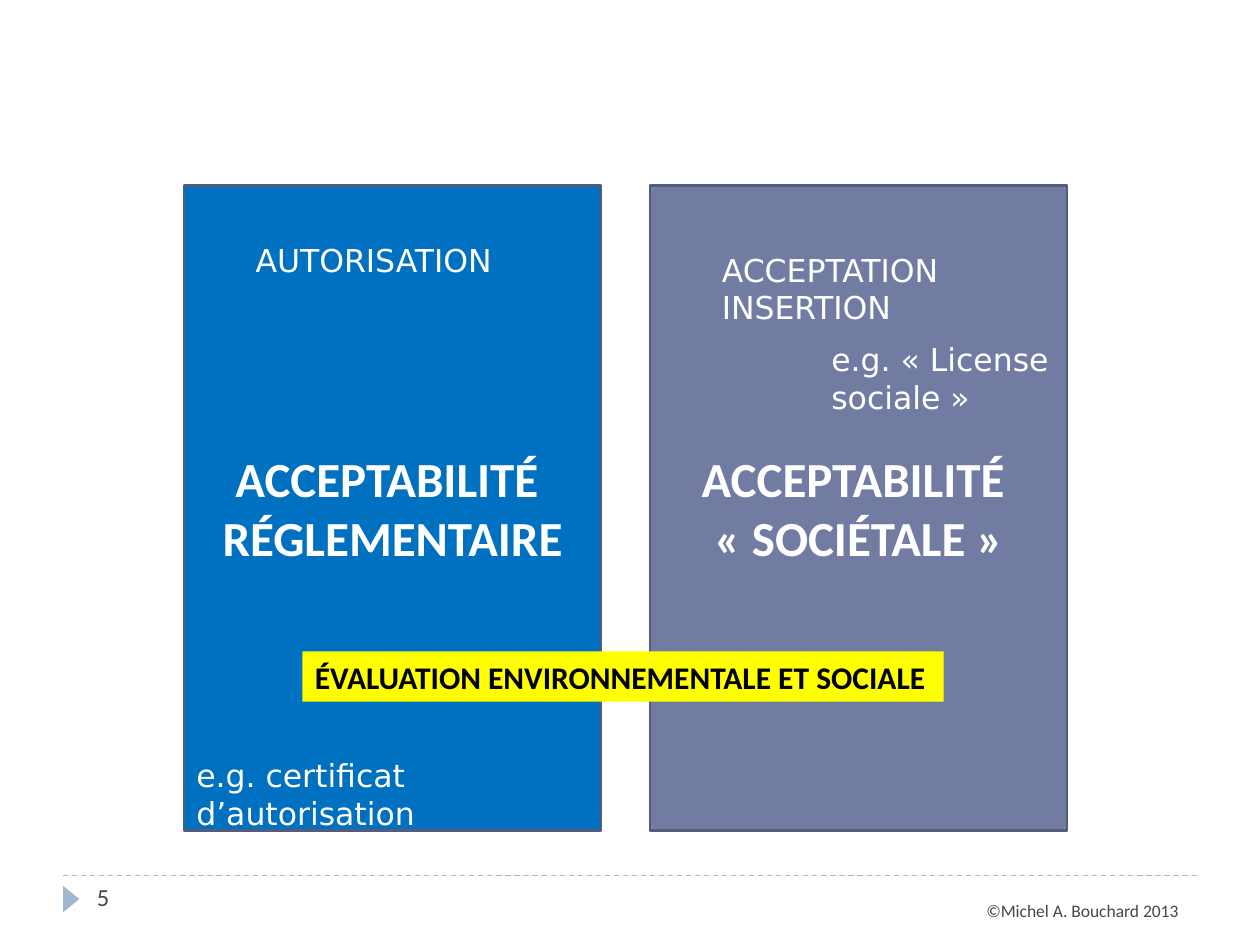
from pptx import Presentation
from pptx.dml.color import RGBColor
from pptx.enum.dml import MSO_LINE
from pptx.enum.shapes import MSO_CONNECTOR, MSO_SHAPE
from pptx.enum.text import MSO_ANCHOR, MSO_AUTO_SIZE, PP_ALIGN
from pptx.oxml.ns import qn
from pptx.util import Inches, Pt
from lxml import etree

RECT, TRI = MSO_SHAPE.RECTANGLE, MSO_SHAPE.ISOSCELES_TRIANGLE
LEFT, MID, RIGHT = PP_ALIGN.LEFT, PP_ALIGN.CENTER, PP_ALIGN.RIGHT
TOP, CORE = MSO_ANCHOR.TOP, MSO_ANCHOR.MIDDLE
GROW, DASH = MSO_AUTO_SIZE.SHAPE_TO_FIT_TEXT, MSO_LINE.DASH

THEME = {
    "blue": "0070C0", "slate": "727CA3", "edge": "545C79", "pale": "9FB8CD",
    "gold": "FFFF00", "white": "FFFFFF", "black": "000000", "ink": "464653",
    "head": 28, "body": 18, "page": 14, "foot": 10,
    "main": "Calibri", "note": "DejaVu Sans",
}
BOLD = {"name": THEME["main"], "bold": True}
HEAD = {**BOLD, "size": Pt(THEME["head"])}
BAND = {**BOLD, "size": Pt(THEME["body"])}
NOTE = {"name": THEME["note"], "size": Pt(THEME["body"])}
PAGE = {"name": THEME["main"], "size": Pt(THEME["page"])}
FOOT = {"name": THEME["main"], "size": Pt(THEME["foot"])}

deck = Presentation()
deck.slide_width, deck.slide_height = Inches(10), Inches(7.5)
WIDE, HIGH = deck.slide_width / 100, deck.slide_height / 100
slide = deck.slides.add_slide(deck.slide_layouts[6])
shapes = slide.shapes


def place(x, y, w, h):
    return int(x * WIDE), int(y * HIGH), int(w * WIDE), int(h * HIGH)


def write(shape, lines, face, tint, align=LEFT, anchor=TOP, fit=False):
    frame = shape.text_frame
    frame.word_wrap = not fit
    frame.vertical_anchor = anchor
    if fit:
        frame.auto_size = GROW
    for i, line in enumerate(lines):
        para = frame.add_paragraph() if i else frame.paragraphs[0]
        para.alignment = align
        run = para.add_run()
        run.text = line
        run.font.color.rgb = RGBColor.from_string(THEME[tint])
        for key, value in face.items():
            setattr(run.font, key, value)


left, top, right, low = place(5, 92.67, 95, 92.67)
rule = shapes.add_connector(MSO_CONNECTOR.STRAIGHT, left, top, right, low)
rule.line.color.rgb = RGBColor.from_string(THEME["pale"])
rule.line.width = Pt(0.75)
rule.line.dash_style = DASH
etree.SubElement(rule._element.spPr, qn("a:effectLst"))

COL, GAP, START = 33.1, 3.9, 14.6
SOLIDS = [
    (TRI, (4.6, 94.27, 2.1, 1.73), "pale", None),
    (RECT, (START, 19.6, COL, 68.27), "blue", "edge"),
    (RECT, (START + COL + GAP, 19.6, COL, 68.27), "slate", "edge"),
    (RECT, (24, 68.93, 50.9, 5.33), "gold", None),
]
made = []
for kind, spot, fill, edge in SOLIDS:
    shape = shapes.add_shape(kind, *place(*spot))
    shape.shadow.inherit = False
    shape.fill.solid()
    shape.fill.fore_color.rgb = RGBColor.from_string(THEME[fill])
    if edge:
        shape.line.color.rgb = RGBColor.from_string(THEME[edge])
        shape.line.width = Pt(1.5)
    else:
        shape.line.fill.background()
    made.append(shape)

mark, law, folk, band = made
mark.rotation = 90
write(law, ["ACCEPTABILITÉ ", "RÉGLEMENTAIRE"], HEAD, "white", MID, CORE)
write(folk, ["ACCEPTABILITÉ ", "« SOCIÉTALE »"], HEAD, "white", MID, CORE)
write(band, ["ÉVALUATION ENVIRONNEMENTALE ET SOCIALE"], BAND, "black", fit=True)

NOTES = [
    ((19.3, 24.8, 21.6, 5.33), ["AUTORISATION"]),
    ((56.3, 25.87, 19.9, 9.47), ["ACCEPTATION", "INSERTION"]),
    ((14.6, 79.33, 19.7, 9.47), ["e.g. certificat", "d’autorisation"]),
    ((65, 35.33, 20.6, 9.47), ["e.g. « License", "sociale »"]),
]
for spot, lines in NOTES:
    write(shapes.add_textbox(*place(*spot)), lines, NOTE, "white", fit=True)

page = shapes.add_textbox(*place(6.7, 92.67, 21.7, 5.33))
write(page, ["5"], PAGE, "ink")
foot = shapes.add_textbox(*place(76, 94.53, 18.5, 3.47))
write(foot, ["©Michel A. Bouchard 2013"], FOOT, "ink", RIGHT)

deck.save("out.pptx")
